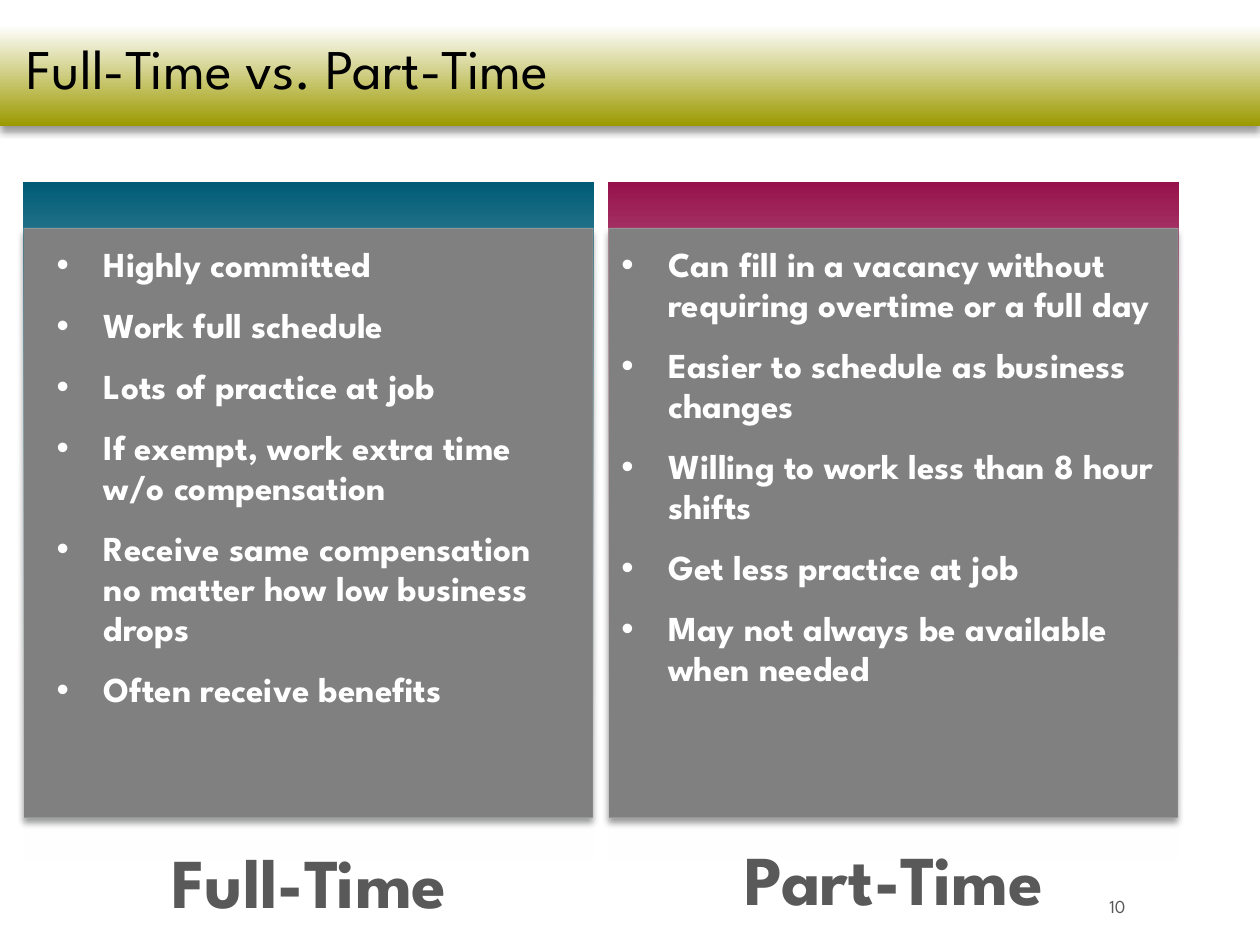
from dataclasses import dataclass

from lxml.etree import SubElement
from pptx import Presentation
from pptx.dml.color import RGBColor as Rgb
from pptx.enum.shapes import MSO_SHAPE as Shape
from pptx.enum.text import MSO_ANCHOR as Anchor, MSO_AUTO_SIZE as AutoSize, PP_ALIGN as Align
from pptx.oxml.ns import qn
from pptx.util import Cm, Pt


@dataclass(frozen=True)
class Theme:
    """Colours, font and type sizes of the slide."""
    font: str = "League Spartan"
    white: str = "FFFFFF"
    black: str = "000000"
    olive: str = "9C9A00"
    teal: str = "005C76"
    berry: str = "97124C"
    card: str = "808080"
    grey: str = "595959"
    dark_grey: str = "262626"
    title_size: float = 32
    caption_size: float = 40
    body_size: float = 20
    number_size: float = 10.5


@dataclass(frozen=True)
class Box:
    """A rectangle in centimetres."""
    left: float
    top: float
    width: float
    height: float

    def inner(self, left, top, width, height):
        """Return a box placed relative to this one."""
        return Box(self.left + left, self.top + top, width, height)

    def lengths(self):
        """Return left, top, width and height as lengths."""
        return Cm(self.left), Cm(self.top), Cm(self.width), Cm(self.height)


@dataclass(frozen=True)
class Column:
    """Content of one side of the comparison."""
    caption: str
    color: str
    items: tuple
    body_inset: float
    body_width: float
    body_height: float
    caption_offset: float


THEME = Theme()
PITCH = 11.79
COLUMNS = (
    Column("Full-Time", THEME.teal, (
        "Highly committed",
        "Work full schedule",
        "Lots of practice at job",
        "If exempt, work extra time w/o compensation",
        "Receive same compensation no matter how low business drops",
        "Often receive benefits",
    ), 0.41, 10.72, 11.94, 13.29),
    Column("Part-Time", THEME.berry, (
        "Can fill in a vacancy without requiring overtime or a full day",
        "Easier to schedule as business changes",
        "Willing to work less than 8 hour shifts",
        "Get less practice at job",
        "May not always be available when needed",
    ), 0, 11.48, 11.63, 13.24),
)


def add_rectangle(slide, box):
    """Add a rectangle without line or shadow."""
    shape = slide.shapes.add_shape(Shape.RECTANGLE, *box.lengths())
    shape.shadow.inherit = False
    shape.line.fill.background()
    return shape


def set_gradient(fill, start, end, angle, start_position=0.0):
    """Fill with a two-stop linear gradient, angle counter-clockwise."""
    fill.gradient()
    fill.gradient_angle = angle
    first, last = fill.gradient_stops
    first.color.rgb, last.color.rgb = Rgb.from_string(start), Rgb.from_string(end)
    first.position, last.position = start_position, 1.0


def set_alpha(shape, percent):
    """Set the opacity of the colour last given to the shape."""
    color = list(shape.element.iter(qn("a:srgbClr")))[-1]
    SubElement(color, qn("a:alpha"), val=str(percent * 1000))


def add_shadow(shape):
    """Give the shape a soft shadow below it."""
    effects = shape.element.spPr.find(qn("a:effectLst"))
    shadow = SubElement(effects, qn("a:outerShdw"), blurRad=str(Pt(4)), dist=str(Pt(3)),
                        dir="5400000", algn="ctr", rotWithShape="0")
    SubElement(shadow, qn("a:srgbClr"), val=THEME.black)
    set_alpha(shape, 40)


def place(shape, box):
    """Move a placeholder to the box and in front of other shapes."""
    shape.left, shape.top, shape.width, shape.height = box.lengths()
    shape.element.getparent().append(shape.element)
    shape.text_frame.auto_size = AutoSize.NONE
    shape.text_frame.word_wrap = True


def add_run(paragraph, text, size, color, bold=False):
    """Add a formatted run and return its font."""
    run = paragraph.add_run()
    run.text = text
    run.font.name, run.font.size, run.font.bold = THEME.font, Pt(size), bold
    run.font.color.rgb = Rgb.from_string(color)
    return run.font


def add_label(slide, box, text, size, color, alignment, bold=False):
    """Add a one-line text box and return it with its font."""
    label = slide.shapes.add_textbox(*box.lengths())
    label.text_frame.word_wrap = True
    paragraph = label.text_frame.paragraphs[0]
    paragraph.alignment = alignment
    return label, add_run(paragraph, text, size, color, bold)


def add_header(slide, box, text):
    """Draw the gradient band and put the title on it."""
    band = add_rectangle(slide, box)
    set_gradient(band.fill, THEME.white, THEME.olive, 270, 0.2)
    add_shadow(band)
    title = slide.shapes.title
    place(title, box.inner(0.28, 0, 23.7, box.height))
    frame = title.text_frame
    frame.vertical_anchor = Anchor.MIDDLE
    frame.margin_top, frame.margin_bottom = Cm(0.56), Cm(0.13)
    paragraph = frame.paragraphs[0]
    paragraph.alignment, paragraph.line_spacing = Align.LEFT, 0.8
    add_run(paragraph, text, THEME.title_size, THEME.black)


def add_bullets(body, items):
    """Write the items as a bulleted list."""
    frame = body.text_frame
    frame.vertical_anchor = Anchor.TOP
    for index, item in enumerate(items):
        paragraph = frame.add_paragraph() if index else frame.paragraphs[0]
        properties = paragraph._p.get_or_add_pPr()
        properties.set("marL", str(Cm(0.95)))
        properties.set("indent", str(-Cm(0.95)))
        SubElement(properties, qn("a:buFont"), typeface="Arial")
        SubElement(properties, qn("a:buChar"), char="•")
        paragraph.line_spacing = 0.95
        paragraph.space_before = Pt(12 if index else 0)
        add_run(paragraph, item, THEME.body_size, THEME.white, True)


def add_column(slide, box, column, body):
    """Draw one side: coloured backing, card, list and caption."""
    backing = add_rectangle(slide, box)
    set_gradient(backing.fill, column.color, THEME.white, 270)
    set_alpha(backing, 0)
    card = add_rectangle(slide, box.inner(0, 0.92, box.width, 11.89))
    card.fill.solid()
    card.fill.fore_color.rgb = Rgb.from_string(THEME.card)
    card.line.color.rgb = Rgb.from_string(THEME.white)
    card.line.width = Pt(0.25)
    set_alpha(card, 50)
    add_shadow(card)
    place(body, box.inner(column.body_inset, 1.15, column.body_width, column.body_height))
    add_bullets(body, column.items)
    caption, font = add_label(slide, box.inner(0, column.caption_offset, 11.5, 1.8), column.caption,
                              THEME.caption_size, THEME.grey, Align.CENTER, True)
    caption.text_frame.paragraphs[0].line_spacing = 0.9
    set_gradient(font.fill, THEME.grey, THEME.dark_grey, 315)


def main():
    """Build and save the presentation."""
    presentation = Presentation()
    presentation.slide_width, presentation.slide_height = Cm(25.4), Cm(19.05)
    slide = presentation.slides.add_slide(presentation.slide_layouts[3])
    bodies = [slide.placeholders[1], slide.placeholders[2]]
    add_header(slide, Box(0, 0, 25.4, 2.54), "Full-Time vs. Part-Time")
    for index, (column, body) in enumerate(zip(COLUMNS, bodies)):
        add_column(slide, Box(0.48 + index * PITCH, 3.68, 11.48, 13.72), column, body)
    number, _ = add_label(slide, Box(19.94, 17.75, 3, 1.02), "10",
                          THEME.number_size, THEME.grey, Align.RIGHT)
    number.text_frame.vertical_anchor = Anchor.MIDDLE
    presentation.save("out.pptx")


if __name__ == "__main__":
    main()
